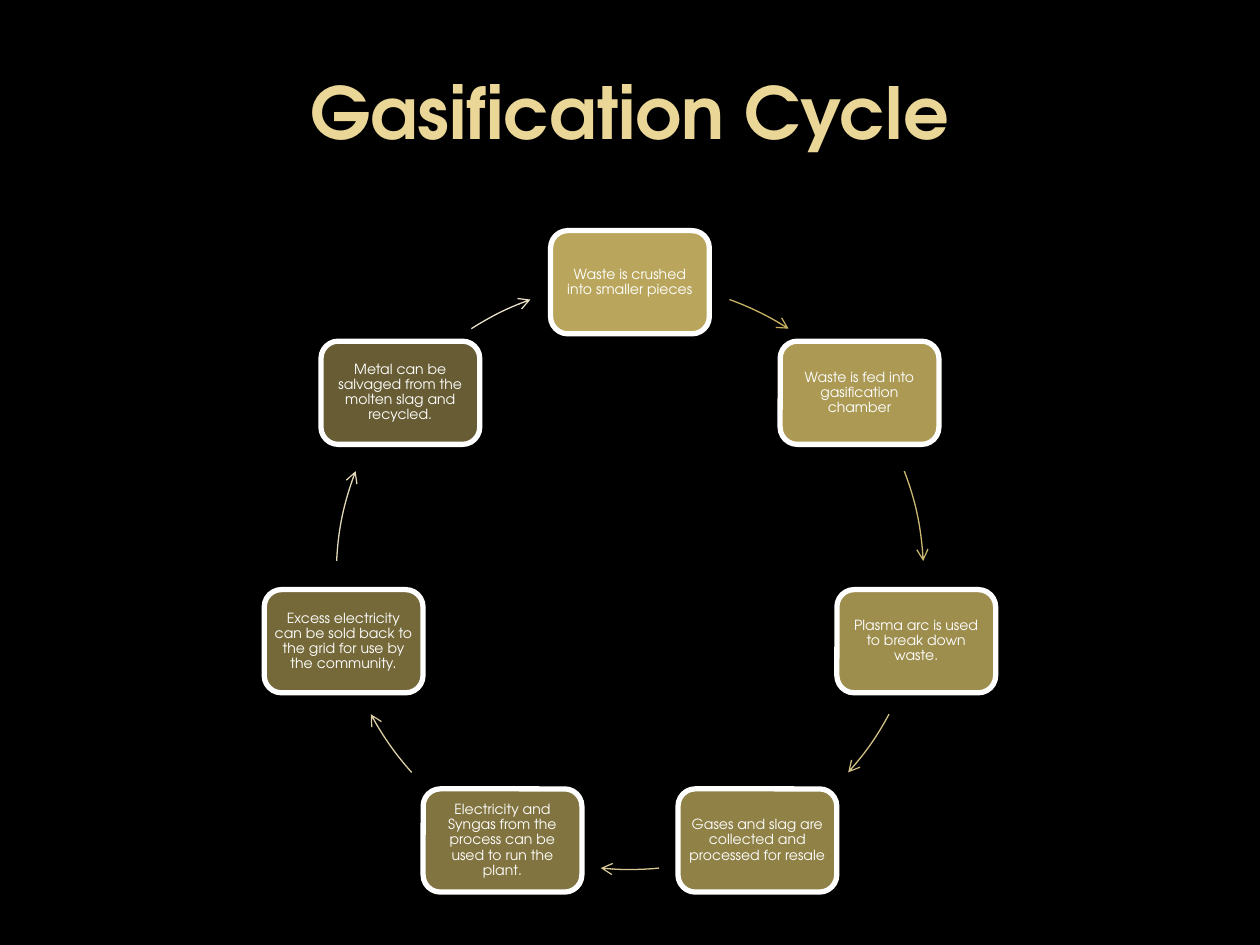
import math

from lxml import etree
from pptx import Presentation
from pptx.dml.color import RGBColor
from pptx.enum.shapes import MSO_SHAPE
from pptx.enum.text import MSO_ANCHOR, PP_ALIGN
from pptx.oxml.ns import qn
from pptx.util import Cm, Pt

ROUNDED = MSO_SHAPE.ROUNDED_RECTANGLE
ARC = MSO_SHAPE.ARC
CENTER = PP_ALIGN.CENTER
MIDDLE = MSO_ANCHOR.MIDDLE

FONT = "TeX Gyre Adventor"
COLOURS = {
    "background": "000000",
    "title": "EAD696",
    "step": "CEB966",
    "white": "FFFFFF",
}
TITLE_FORMAT = {"name": FONT, "size": Pt(41), "bold": True}
STEP_FORMAT = {"name": FONT, "size": Pt(8)}

# Text, arrow colour, arrow start and end in degrees clockwise from the top
STEPS = [
    ("Waste is crushed into smaller pieces", "C5B161", 19.8, 32.7),
    ("Waste is fed into gasification chamber", "CAB873", 69.1, 87.1),
    ("Plasma arc is used to break down waste.", "D0BF84", 118.1, 132),
    ("Gases and slag are collected and processed for resale", "D6C795", 174.3, 185.7),
    ("Electricity and Syngas from the process can be used to run the plant.",
     "DCCFA5", 228, 241.9),
    ("Excess electricity can be sold back to the grid for use by the community.",
     "E2D7B6", 272.9, 290.9),
    ("Metal can be salvaged from the molten slag and recycled.", "E8E0C7", 327.3, 340.2),
]
STEP_WIDTH, STEP_HEIGHT = Cm(3.2), Cm(2.08)
FIRST_OPACITY, LAST_OPACITY = 90, 50


def rgb(value):
    return RGBColor.from_string(value)


def write_text(shape, text, colour, font_format, inset, line_spacing=1.0):
    frame = shape.text_frame
    frame.word_wrap = True
    frame.vertical_anchor = MIDDLE
    for side in ("left", "top", "right", "bottom"):
        setattr(frame, f"margin_{side}", inset)
    paragraph = frame.paragraphs[0]
    paragraph.alignment = CENTER
    paragraph.line_spacing = line_spacing
    run = paragraph.add_run()
    run.text = text
    for name, value in font_format.items():
        setattr(run.font, name, value)
    run.font.color.rgb = rgb(colour)


def add_title(slide, left, top, width, height):
    box = slide.shapes.add_textbox(left, top, width, height)
    write_text(box, "Gasification Cycle", COLOURS["title"], TITLE_FORMAT, Cm(0.2))


def add_step(slide, center_x, center_y, text, opacity):
    shape = slide.shapes.add_shape(
        ROUNDED, round(center_x - STEP_WIDTH / 2), round(center_y - STEP_HEIGHT / 2),
        STEP_WIDTH, STEP_HEIGHT)
    shape.shadow.inherit = False
    shape.fill.solid()
    shape.fill.fore_color.rgb = rgb(COLOURS["step"])
    # Transparency of the fill
    fill_colour = shape._element.spPr.find(qn("a:solidFill"))[0]
    etree.SubElement(fill_colour, qn("a:alpha"), val=str(round(opacity * 1000)))
    shape.line.color.rgb = rgb(COLOURS["white"])
    shape.line.width = Pt(3)
    write_text(shape, text, COLOURS["white"], STEP_FORMAT, Cm(0.08), 0.9)


def add_arc_arrow(slide, left, top, diameter, colour, start, end):
    arc = slide.shapes.add_shape(ARC, left, top, diameter, diameter)
    arc.shadow.inherit = False
    arc.fill.background()
    # Arc angles run clockwise from the right, in units of 1/0.6 degree
    for index, angle in enumerate((start, end)):
        arc.adjustments[index] = (angle - 90) % 360 * 0.6
    arc.line.color.rgb = rgb(colour)
    arc.line.width = Pt(0.75)
    line = arc._element.spPr.find(qn("a:ln"))
    etree.SubElement(line, qn("a:tailEnd"), type="arrow")


def add_cycle(slide, left, top, diameter):
    radius = diameter / 2
    last = len(STEPS) - 1
    for index, (text, arrow_colour, start, end) in enumerate(STEPS):
        angle = 2 * math.pi * index / len(STEPS)
        opacity = FIRST_OPACITY + (LAST_OPACITY - FIRST_OPACITY) * index / last
        add_step(slide, left + radius * (1 + math.sin(angle)),
                 top + radius * (1 - math.cos(angle)), text, opacity)
        add_arc_arrow(slide, left, top, diameter, arrow_colour, start, end)


def main():
    presentation = Presentation()
    presentation.slide_width, presentation.slide_height = Cm(25.4), Cm(19.05)
    slide = presentation.slides.add_slide(presentation.slide_layouts[6])
    slide.background.fill.solid()
    slide.background.fill.fore_color.rgb = rgb(COLOURS["background"])
    add_title(slide, Cm(1.27), Cm(0.64), Cm(22.86), Cm(3.18))
    add_cycle(slide, Cm(6.78), Cm(5.69), Cm(11.84))
    presentation.save("out.pptx")


if __name__ == "__main__":
    main()
